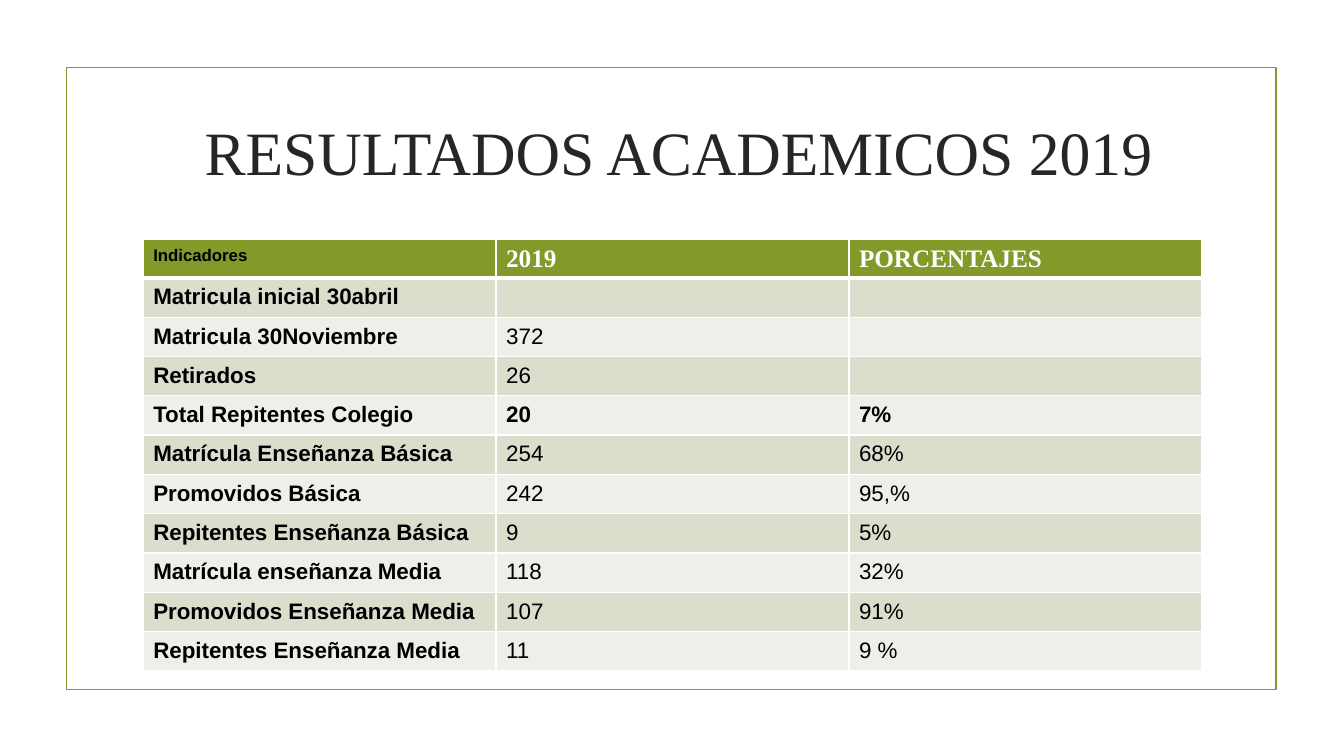
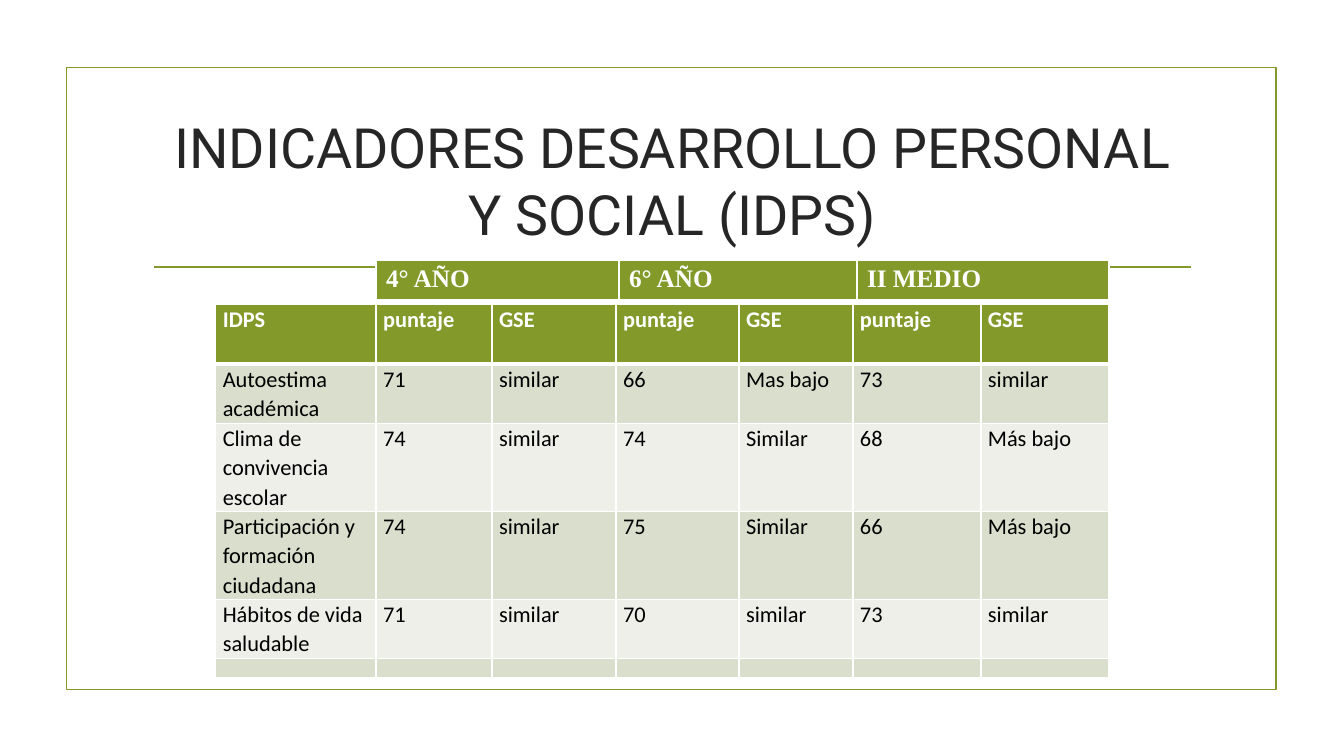
from dataclasses import dataclass
from typing import Callable

from lxml.etree import SubElement
from pptx import Presentation
from pptx.dml.color import RGBColor
from pptx.enum.shapes import MSO_CONNECTOR, MSO_SHAPE
from pptx.enum.text import MSO_ANCHOR, MSO_AUTO_SIZE, PP_ALIGN
from pptx.oxml.ns import qn
from pptx.util import Emu, Pt

# Shared scale and palette
EMU_PER_PX = 9144  # 100 px to the inch
GREEN, WHITE, BLACK, DARK = "83992A", "FFFFFF", "000000", "262626"
BANDS = ("D9DECD", "EDEFE8")
THIN, THICK = 1, 3


@dataclass(frozen=True)
class TextStyle:
    font: str
    size: float
    color: str = BLACK
    bold: bool = False
    line_spacing: float = 1.07


@dataclass(frozen=True)
class TableSpec:
    left: int
    top: int
    widths: list[int]
    heights: list[int]
    rows: list[list[str]]
    style_at: Callable[[int, int], TextStyle]
    side_inset: int = 10
    vertical_inset: int = 5


@dataclass(frozen=True)
class SlideSpec:
    title: str
    title_style: TextStyle
    title_box: tuple[int, int, int, int]
    tables: list[TableSpec]


def px(value: int) -> Emu:
    return Emu(value * EMU_PER_PX)


def rgb(color: str) -> RGBColor:
    return RGBColor.from_string(color)


# Text
def write_text(paragraph, text: str, style: TextStyle) -> None:
    paragraph.line_spacing = style.line_spacing
    if not text:
        # Keeps an empty cell as low as its text size
        SubElement(paragraph._p, qn("a:endParaRPr"), sz=str(int(style.size * 100)))
        return
    run = paragraph.add_run()
    run.text = text
    run.font.name = style.font
    run.font.size = Pt(style.size)
    run.font.bold = style.bold
    run.font.color.rgb = rgb(style.color)


def set_title(slide, spec: SlideSpec) -> None:
    title = slide.shapes.title
    title.left, title.top, title.width, title.height = map(px, spec.title_box)
    frame = title.text_frame
    frame.word_wrap = True
    frame.auto_size = MSO_AUTO_SIZE.NONE
    frame.vertical_anchor = MSO_ANCHOR.MIDDLE
    paragraph = frame.paragraphs[0]
    paragraph.alignment = PP_ALIGN.CENTER
    write_text(paragraph, spec.title, spec.title_style)


# Frame and rule, placed once on the layout
def decorate_layout(layout, slide) -> None:
    frame = slide.shapes.add_shape(MSO_SHAPE.RECTANGLE, px(66), px(67), px(1200), px(617))
    frame.shadow.inherit = False
    frame.fill.background()
    rule = slide.shapes.add_connector(MSO_CONNECTOR.STRAIGHT, px(153), px(265), px(1181), px(265))
    SubElement(rule._element.spPr, qn("a:effectLst"))
    for position, shape in enumerate((frame, rule)):
        shape.line.color.rgb = rgb(GREEN)
        shape.line.width = Pt(1.25)
        shape._element.xpath(".//p:cNvPr")[0].set("id", str(100 + position))
        layout.shapes._spTree.insert(2 + position, shape._element)


# Tables
def set_border(cell, side: str, width: int) -> None:
    line = SubElement(cell._tc.get_or_add_tcPr(), qn(f"a:ln{side}"), w=str(Pt(width)))
    fill = SubElement(line, qn("a:solidFill"))
    SubElement(fill, qn("a:srgbClr"), val=WHITE)


def draw_table(slide, spec: TableSpec) -> None:
    table = slide.shapes.add_table(
        len(spec.rows), len(spec.widths), px(spec.left), px(spec.top),
        px(sum(spec.widths)), px(sum(spec.heights))).table
    table.first_row = table.horz_banding = False
    for column, width in zip(table.columns, spec.widths):
        column.width = px(width)
    for row, height in zip(table.rows, spec.heights):
        row.height = px(height)
    for row_index, texts in enumerate(spec.rows):
        for column_index, text in enumerate(texts):
            cell = table.cell(row_index, column_index)
            cell.margin_left = cell.margin_right = px(spec.side_inset)
            cell.margin_top = cell.margin_bottom = px(spec.vertical_inset)
            for side in ("L", "R"):
                set_border(cell, side, THIN)
            set_border(cell, "T", THICK if row_index == 1 else THIN)
            set_border(cell, "B", THICK if row_index == 0 else THIN)
            cell.fill.solid()
            cell.fill.fore_color.rgb = rgb(BANDS[(row_index - 1) % 2] if row_index else GREEN)
            write_text(cell.text_frame.paragraphs[0], text,
                       spec.style_at(row_index, column_index))


# Cell styles
SERIF_HEADER = TextStyle("Times New Roman", 18, WHITE, True, 1.0)
TOTAL_ROW = 4


def results_style(row: int, column: int) -> TextStyle:
    if row == 0:
        return SERIF_HEADER if column else TextStyle("Arial", 12, bold=True)
    return TextStyle("Arial", 16, bold=column == 0 or row == TOTAL_ROW)


def years_style(row: int, column: int) -> TextStyle:
    return SERIF_HEADER


def indicators_style(row: int, column: int) -> TextStyle:
    if row == 0:
        return TextStyle("Calibri", 16, WHITE, True)
    return TextStyle("Calibri", 10 if row == len(INDICATOR_ROWS) - 1 else 16)


# Content
RESULT_ROWS = [
    ["Indicadores", "2019", "PORCENTAJES"],
    ["Matricula inicial 30abril", "", ""],
    ["Matricula 30Noviembre", "372", ""],
    ["Retirados", "26", ""],
    ["Total Repitentes Colegio", "20", "7%"],
    ["Matrícula Enseñanza Básica", "254", "68%"],
    ["Promovidos Básica", "242", "95,%"],
    ["Repitentes Enseñanza Básica", "9", "5%"],
    ["Matrícula enseñanza Media", "118", "32%"],
    ["Promovidos Enseñanza Media", "107", "91%"],
    ["Repitentes Enseñanza Media", "11", "9 %"],
]
INDICATOR_ROWS = [
    ["IDPS"] + ["puntaje", "GSE"] * 3,
    ["Autoestima académica", "71", "similar", "66", "Mas bajo", "73", "similar"],
    ["Clima de convivencia escolar", "74", "similar", "74", "Similar", "68", "Más bajo"],
    ["Participación y formación ciudadana", "74", "similar", "75", "Similar", "66", "Más bajo"],
    ["Hábitos de vida saludable", "71", "similar", "70", "similar", "73", "similar"],
    [""] * 7,
]
SLIDES = [
    SlideSpec(
        "RESULTADOS ACADEMICOS 2019",
        TextStyle("Times New Roman", 44, DARK, line_spacing=1.0),
        (155, 107, 1037, 86),
        [TableSpec(142, 238, [350] * 3, [37] + [39] * 10, RESULT_ROWS, results_style)]),
    SlideSpec(
        "INDICADORES DESARROLLO PERSONAL Y SOCIAL (IDPS)",
        TextStyle("Roboto", 39.6, DARK, line_spacing=1.0),
        (142, 107, 1050, 143),
        [TableSpec(373, 258, [241, 236, 250], [40],
                   [["4° AÑO", "6° AÑO", "II MEDIO"]], years_style),
         TableSpec(214, 302, [159, 115, 123, 122, 113, 127, 127],
                   [59, 59, 87, 87, 59, 19], INDICATOR_ROWS, indicators_style, 7, 0)]),
]


def main() -> None:
    presentation = Presentation()
    presentation.slide_width, presentation.slide_height = px(1333), px(750)
    layout = presentation.slide_layouts[5]
    for index, spec in enumerate(SLIDES):
        slide = presentation.slides.add_slide(layout)
        if index == 0:
            decorate_layout(layout, slide)
        set_title(slide, spec)
        for table in spec.tables:
            draw_table(slide, table)
    presentation.save("out.pptx")


if __name__ == "__main__":
    main()
